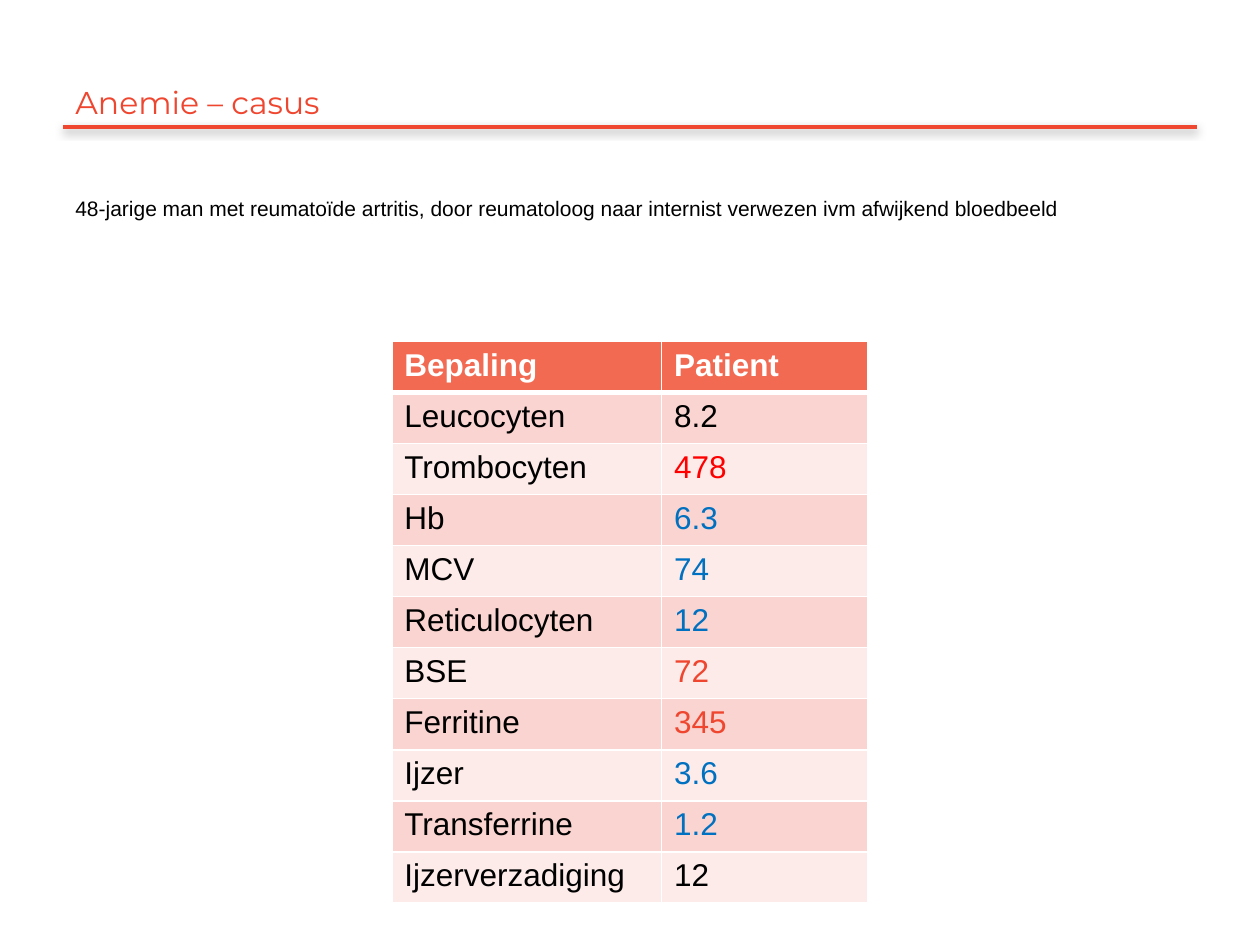
from lxml import etree
from pptx import Presentation
from pptx.dml.color import RGBColor
from pptx.enum.shapes import MSO_CONNECTOR
from pptx.enum.text import MSO_ANCHOR
from pptx.oxml import parse_xml
from pptx.oxml.ns import nsdecls, qn
from pptx.util import Inches, Pt

STRAIGHT = MSO_CONNECTOR.STRAIGHT
TOP, BOTTOM = MSO_ANCHOR.TOP, MSO_ANCHOR.BOTTOM

ACCENT = RGBColor(0xEF, 0x46, 0x30)
HEADER = RGBColor(0xF2, 0x6A, 0x51)
BANDS = (RGBColor(0xFA, 0xD4, 0xD0), RGBColor(0xFC, 0xEB, 0xE9))
BLACK = RGBColor(0x00, 0x00, 0x00)
WHITE = RGBColor(0xFF, 0xFF, 0xFF)
RED = RGBColor(0xFF, 0x00, 0x00)
BLUE = RGBColor(0x00, 0x70, 0xC0)

HEADINGS = ("Bepaling", "Patient")
RESULTS = (
    ("Leucocyten", "8.2", BLACK),
    ("Trombocyten", "478", RED),
    ("Hb", "6.3", BLUE),
    ("MCV", "74", BLUE),
    ("Reticulocyten", "12", BLUE),
    ("BSE", "72", ACCENT),
    ("Ferritine", "345", ACCENT),
    ("Ijzer", "3.6", BLUE),
    ("Transferrine", "1.2", BLUE),
    ("Ijzerverzadiging", "12", BLACK),
)


class CaseSlide:
    """Draws the elements of a case slide in one shared style."""

    def __init__(self, slide):
        self.slide = slide
        self.body_font = "Arial"
        self.title_font = "Montserrat"

    def style(self, paragraph, size, color, name, bold=False):
        font = paragraph.font
        font.size, font.name, font.bold = Pt(size), name, bold
        font.color.rgb = color

    def text(self, text, top, height, size, color, name, anchor=TOP):
        shape = self.slide.shapes.add_textbox(
            Inches(0.5), Inches(top), Inches(9), Inches(height))
        frame = shape.text_frame
        frame.word_wrap = True
        frame.vertical_anchor = anchor
        frame.text = text
        self.style(frame.paragraphs[0], size, color, name)

    def rule(self, top):
        line = self.slide.shapes.add_connector(
            STRAIGHT, Inches(0.5), Inches(top), Inches(9.5), Inches(top))
        line.line.color.rgb = ACCENT
        line.line.width = Pt(2)
        line._element.spPr.append(parse_xml(
            f'<a:effectLst {nsdecls("a")}>'
            f'<a:outerShdw blurRad="{Pt(5)}" dist="{Pt(1.6)}" dir="5400000" rotWithShape="0">'
            '<a:srgbClr val="000000"><a:alpha val="38000"/></a:srgbClr>'
            '</a:outerShdw></a:effectLst>'))

    def cell(self, cell, text, fill, color, header=False):
        properties = cell._tc.get_or_add_tcPr()
        top, bottom = (1, 3) if header else (1, 1)
        for side, width in (("L", 1), ("R", 1), ("T", top), ("B", bottom)):
            border = etree.SubElement(properties, qn(f"a:ln{side}"), w=str(Pt(width)))
            solid = etree.SubElement(border, qn("a:solidFill"))
            etree.SubElement(solid, qn("a:srgbClr"), val=str(WHITE))
        cell.fill.solid()
        cell.fill.fore_color.rgb = fill
        cell.text = text
        self.style(cell.text_frame.paragraphs[0], 18, color, self.body_font, header)

    def results_table(self):
        table = self.slide.shapes.add_table(
            len(RESULTS) + 1, len(HEADINGS),
            Inches(3.11), Inches(2.71), Inches(3.78), Inches(4.46)).table
        for column, width in zip(table.columns, (2.14, 1.64)):
            column.width = Inches(width)
        for index, heading in enumerate(HEADINGS):
            self.cell(table.cell(0, index), heading, HEADER, WHITE, header=True)
        for row, (test, value, color) in enumerate(RESULTS, start=1):
            fill = BANDS[(row - 1) % 2]
            self.cell(table.cell(row, 0), test, fill, BLACK)
            self.cell(table.cell(row, 1), value, fill, color)
        table.cell(1, 0)
        for index in range(len(HEADINGS)):
            border = table.cell(1, index)._tc.tcPr.find(qn("a:lnT"))
            border.set("w", str(Pt(3)))


def main():
    presentation = Presentation()
    presentation.slide_width, presentation.slide_height = Inches(10), Inches(7.5)
    case = CaseSlide(presentation.slides.add_slide(presentation.slide_layouts[6]))
    case.rule(1.01)
    case.text("Anemie – casus", 0.3, 0.71, 18, ACCENT, case.title_font, BOTTOM)
    case.text("48-jarige man met reumatoïde artritis, door reumatoloog naar internist "
              "verwezen ivm afwijkend bloedbeeld", 1.5, 5.18, 12, BLACK, case.body_font)
    case.results_table()
    presentation.save("out.pptx")


if __name__ == "__main__":
    main()
